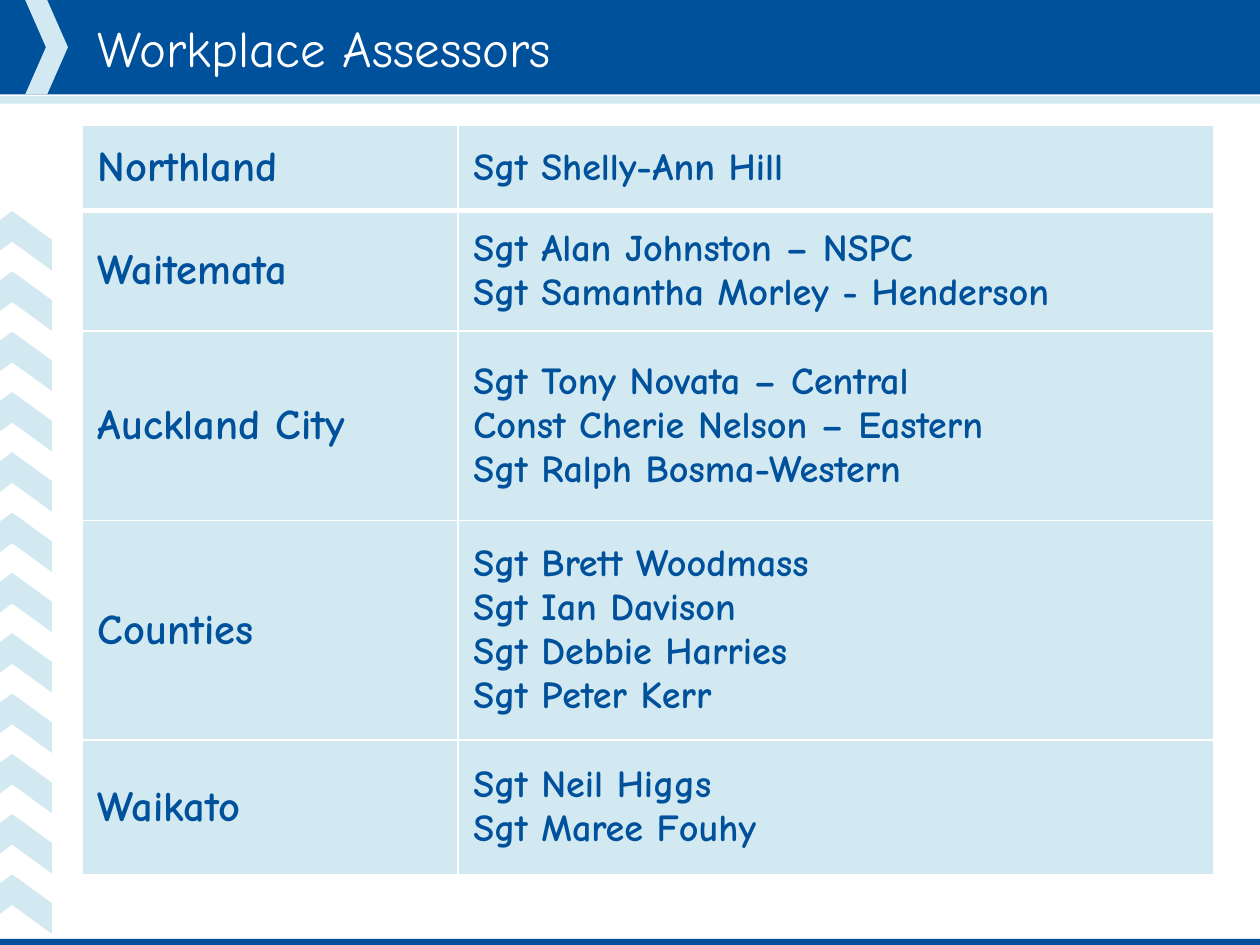
import pptx
import pptx.dml.color
import pptx.enum.shapes
import pptx.enum.text
import pptx.oxml
import pptx.oxml.ns
import pptx.util

BLUE = pptx.dml.color.RGBColor(0x00, 0x51, 0x9B)
PALE = pptx.dml.color.RGBColor(0xD3, 0xE9, 0xF2)
WHITE = pptx.dml.color.RGBColor(0xFF, 0xFF, 0xFF)
RECT = pptx.enum.shapes.MSO_SHAPE.RECTANGLE
CHEVRON = pptx.enum.shapes.MSO_SHAPE.CHEVRON
MIDDLE = pptx.enum.text.MSO_ANCHOR.MIDDLE
FONT = "Comic Neue"
WIDTH, HEIGHT = 8.25, 6.19
ROW_HEIGHTS = [0.56, 0.79, 1.24, 1.44, 0.88]
COLUMN_SHARES = [0.332, 0.668]
ASSESSORS = [
    ("Northland", ["Sgt Shelly-Ann Hill"]),
    ("Waitemata", ["Sgt Alan Johnston – NSPC", "Sgt Samantha Morley - Henderson"]),
    ("Auckland City", ["Sgt Tony Novata – Central", "Const Cherie Nelson – Eastern",
                       "Sgt Ralph Bosma-Western"]),
    ("Counties", ["Sgt Brett Woodmass", "Sgt Ian Davison", "Sgt Debbie Harries",
                  "Sgt Peter Kerr"]),
    ("Waikato", ["Sgt Neil Higgs", "Sgt Maree Fouhy"]),
]


def inches(*lengths):
    """Convert lengths in inches to slide units."""
    return [pptx.util.Inches(length) for length in lengths]


def add_block(slide, kind, box, color):
    """Add a plain filled shape in the box."""
    sp = slide.shapes.add_shape(kind, *inches(*box))
    sp.shadow.inherit = False
    sp.fill.solid()
    sp.fill.fore_color.rgb = color
    sp.line.fill.background()
    if kind == CHEVRON:
        sp.adjustments[0] = 0.486
    return sp


def write_lines(tf, lines, size, color, bold):
    """Write one paragraph per line in a single format."""
    tf.text = "\n".join(lines)
    values = {"name": FONT, "size": pptx.util.Pt(size), "bold": bold}
    for p in tf.paragraphs:
        for r in p.runs:
            for key, value in values.items():
                setattr(r.font, key, value)
            r.font.color.rgb = color


def add_header(slide, box, title):
    """Add the title band with its chevron and underline."""
    x, y, w, h = box
    add_block(slide, RECT, box, BLUE)
    add_block(slide, CHEVRON, (x + 0.02 * w, y, 0.28, h), PALE)
    add_block(slide, RECT, (x, y + h + 0.01, w, 0.05), PALE)
    tf = slide.shapes.add_textbox(*inches(x + 0.54, y, w - 0.96, h)).text_frame
    tf.word_wrap = True
    tf.vertical_anchor = MIDDLE
    write_lines(tf, [title], 24, WHITE, False)


def add_chevron_column(slide, box, count):
    """Stack upward chevrons at equal steps down the box."""
    x, y, w, h = box
    step = h / count
    for i in range(count):
        center = y + (i + 0.5) * step
        sp = add_block(slide, CHEVRON, (x + (w - 0.39) / 2, center - w / 2, 0.39, w), PALE)
        sp.rotation = 270


def set_borders(cell, widths):
    """Draw white cell borders with the given widths in points."""
    tcPr = cell._tc.get_or_add_tcPr()
    for i, (side, width) in enumerate(widths.items()):
        tcPr.insert(i, pptx.oxml.parse_xml(
            f'<a:ln{side} {pptx.oxml.ns.nsdecls("a")} w="{pptx.util.Pt(width)}">'
            f'<a:solidFill><a:srgbClr val="{WHITE}"/></a:solidFill></a:ln{side}>'))


def add_assessor_table(slide, box):
    """Add the table of districts and their assessors."""
    shape = slide.shapes.add_table(len(ASSESSORS), len(COLUMN_SHARES), *inches(*box))
    table = shape.table
    for column, share in zip(table.columns, COLUMN_SHARES):
        column.width = pptx.util.Inches(box[2] * share)
    for i, (district, names) in enumerate(ASSESSORS):
        table.rows[i].height = pptx.util.Inches(ROW_HEIGHTS[i])
        for j, (lines, size) in enumerate([([district], 20), (names, 18)]):
            cell = table.cell(i, j)
            cell.vertical_anchor = MIDDLE
            cell.fill.solid()
            cell.fill.fore_color.rgb = PALE
            write_lines(cell.text_frame, lines, size, BLUE, True)
            set_borders(cell, {"L": 1, "R": 1, "T": 3 if i == 1 else 1,
                               "B": 3 if i == 0 else 1})


def main():
    """Build and save the slide."""
    prs = pptx.Presentation()
    prs.slide_width, prs.slide_height = inches(WIDTH, HEIGHT)
    slide = prs.slides.add_slide(prs.slide_layouts[6])
    add_header(slide, (0, 0, WIDTH, 0.1 * HEIGHT), "Workplace Assessors")
    add_chevron_column(slide, (-0.18, 1.38, 0.52, 4.74), 12)
    add_block(slide, RECT, (0, HEIGHT - 0.04, WIDTH, 0.04), BLUE)
    add_assessor_table(slide, (0.54, 0.82, 7.41, sum(ROW_HEIGHTS)))
    prs.save("out.pptx")


if __name__ == "__main__":
    main()
